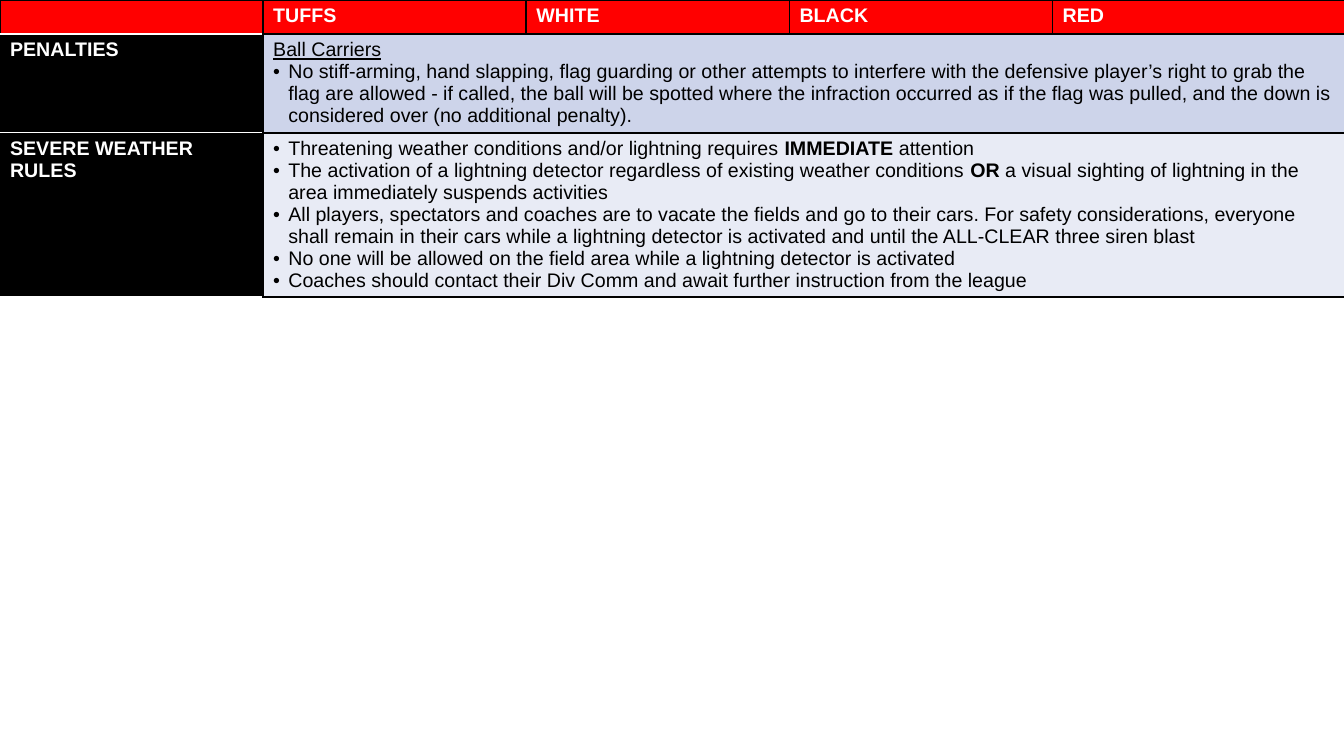
from lxml import etree
from pptx import Presentation
from pptx.dml.color import RGBColor
from pptx.oxml import ns
from pptx.util import Inches, Pt

COLORS = {"header": "FF0000", "label": "000000", "penalties": "CDD4EA",
          "weather": "E8EBF5", "black": "000000", "white": "FFFFFF"}
FONT = "Arial"
FONT_SIZE = 14

presentation = Presentation()
presentation.slide_width = Inches(13.33)
presentation.slide_height = Inches(7.5)
slide = presentation.slides.add_slide(presentation.slide_layouts[6])

# Content: a paragraph is (bulleted, runs), a run is (text, style)
headings = ["", "TUFFS", "WHITE", "BLACK", "RED"]
sections = [
    ("PENALTIES", "penalties", [
        (False, [("Ball Carriers", "underline")]),
        (True, [("No stiff-arming, hand slapping, flag guarding or other attempts to interfere with "
                 "the defensive player’s right to grab the flag are allowed - if called, the ball will "
                 "be spotted where the infraction occurred as if the flag was pulled, and the down is "
                 "considered over (no additional penalty).", "")]),
    ]),
    ("SEVERE WEATHER RULES", "weather", [
        (True, [("Threatening weather conditions and/or lightning requires ", ""),
                ("IMMEDIATE", "bold"), (" attention", "")]),
        (True, [("The activation of a lightning detector regardless of existing weather conditions ", ""),
                ("OR", "bold"),
                (" a visual sighting of lightning in the area immediately suspends activities", "")]),
        (True, [("All players, spectators and coaches are to vacate the fields and go to their cars. "
                 "For safety considerations, everyone shall remain in their cars while a lightning "
                 "detector is activated and until the ALL-CLEAR three siren blast", "")]),
        (True, [("No one will be allowed on the field area while a lightning detector is activated", "")]),
        (True, [("Coaches should contact their Div Comm and await further instruction from the league", "")]),
    ]),
]


def style_cell(cell, fill, white_sides=()):
    """Draw the four borders, then the fill."""
    properties = cell._tc.get_or_add_tcPr()
    for side in "LRTB":
        is_white = side in white_sides
        line = etree.SubElement(properties, ns.qn(f"a:ln{side}"), w=str(Pt(1 if is_white else 1.5)))
        solid = etree.SubElement(line, ns.qn("a:solidFill"))
        etree.SubElement(solid, ns.qn("a:srgbClr"), val=COLORS["white" if is_white else "black"])
    cell.fill.solid()
    cell.fill.fore_color.rgb = RGBColor.from_string(COLORS[fill])


def write_cell(cell, paragraphs, color):
    """Fill a cell with paragraphs, run by run."""
    for index, (bulleted, runs) in enumerate(paragraphs):
        frame = cell.text_frame
        paragraph = frame.add_paragraph() if index else frame.paragraphs[0]
        if bulleted:
            properties = paragraph._p.get_or_add_pPr()
            properties.set("marL", str(Inches(0.15)))
            properties.set("indent", str(Inches(-0.15)))
            bullet_color = etree.SubElement(properties, ns.qn("a:buClr"))
            etree.SubElement(bullet_color, ns.qn("a:srgbClr"), val=COLORS["black"])
            etree.SubElement(properties, ns.qn("a:buFont"), typeface=FONT)
            etree.SubElement(properties, ns.qn("a:buChar"), char="•")
        for text, style in runs:
            run = paragraph.add_run()
            run.text = text
            run.font.name = FONT
            run.font.size = Pt(FONT_SIZE)
            run.font.bold = style == "bold"
            run.font.underline = style == "underline"
            run.font.color.rgb = RGBColor.from_string(COLORS[color])


# Table grid
column_widths = [2.61] * 4 + [2.94]
row_heights = [0.32, 0.98, 1.63]
table = slide.shapes.add_table(len(row_heights), len(column_widths), 0, 0,
                               Inches(sum(column_widths)), Inches(sum(row_heights))).table
for column, width in zip(table.columns, column_widths):
    column.width = Inches(width)
for row, height in zip(table.rows, row_heights):
    row.height = Inches(height)

# Header row
for index, heading in enumerate(headings):
    cell = table.cell(0, index)
    style_cell(cell, "header", "" if heading else "B")
    if heading:
        write_cell(cell, [(False, [(heading, "bold")])], "white")
    else:
        etree.SubElement(cell.text_frame.paragraphs[0]._p, ns.qn("a:endParaRPr"),
                         sz=str(FONT_SIZE * 100))

# Rule sections: a label, then one cell across the other columns
for row_index, (label, fill, paragraphs) in enumerate(sections, start=1):
    label_cell = table.cell(row_index, 0)
    style_cell(label_cell, "label", "TB")
    write_cell(label_cell, [(False, [(label, "bold")])], "white")
    for column_index in range(1, len(column_widths)):
        style_cell(table.cell(row_index, column_index), fill)
    rules_cell = table.cell(row_index, 1)
    rules_cell.merge(table.cell(row_index, len(column_widths) - 1))
    write_cell(rules_cell, paragraphs, "black")

presentation.save("out.pptx")
